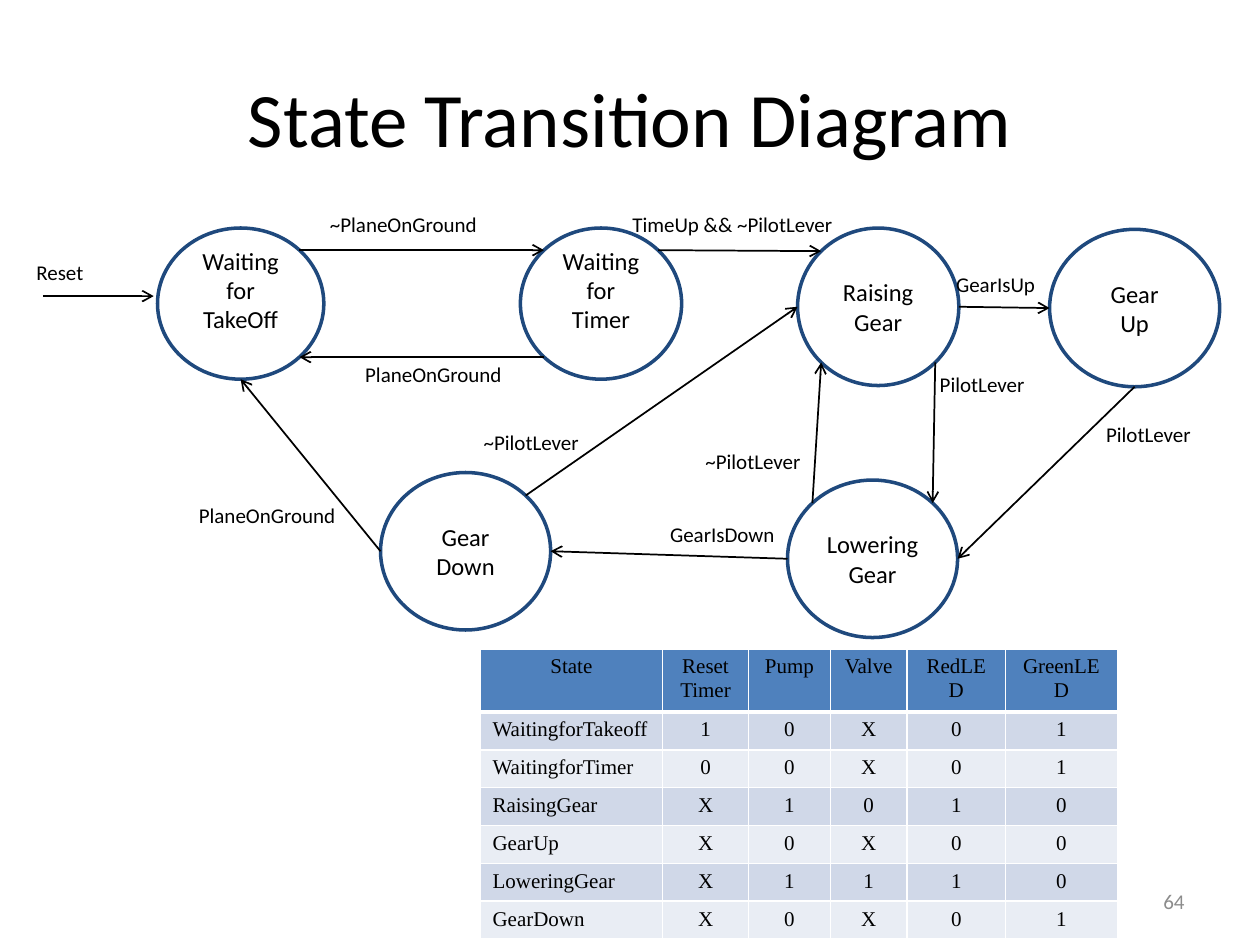
from math import cos, pi, sin
from typing import NamedTuple, Optional

from lxml.etree import SubElement
from pptx import Presentation
from pptx.dml.color import RGBColor
from pptx.enum.shapes import MSO_CONNECTOR, MSO_SHAPE
from pptx.enum.text import MSO_ANCHOR, MSO_AUTO_SIZE, PP_ALIGN
from pptx.oxml.ns import qn
from pptx.util import Pt

PX = 9144  # EMU in one px, at 100 px to the inch
BLACK, WHITE, NAVY, GRAY = "000000", "FFFFFF", "1F497D", "8C8C8C"
HEADER_FILL, BAND_FILLS = "4F81BD", ("D0D8E8", "E9EDF4")

# Connection sites of an ellipse, counterclockwise from the top
TOP, TOP_LEFT, LEFT, BOTTOM_LEFT, BOTTOM, BOTTOM_RIGHT, RIGHT, TOP_RIGHT = range(8)


class State(NamedTuple):
    text: str
    left: int
    top: int
    width: int
    height: int
    lift: int = 0  # extra space under the text


class Transition(NamedTuple):
    source: str
    source_site: int
    target: str
    target_site: int


class Label(NamedTuple):
    text: str
    left: int
    top: int
    width: int


STATES = {
    "takeoff": State("Waiting\vfor\vTakeOff", 125, 181, 132, 120, 22),
    "timer": State("Waiting\vfor\vTimer", 413, 181, 128, 120, 22),
    "up": State("Gear\vUp", 833, 182, 135, 125),
    "raising": State("Raising\vGear", 633, 181, 128, 125),
    "lowering": State("Lowering\vGear", 625, 381, 135, 125),
    "down": State("Gear\vDown", 302, 375, 135, 125),
}
TRANSITIONS = [
    Transition("takeoff", TOP_RIGHT, "timer", TOP_LEFT),
    Transition("timer", BOTTOM_LEFT, "takeoff", BOTTOM_RIGHT),
    Transition("timer", TOP_RIGHT, "raising", TOP_LEFT),
    Transition("raising", RIGHT, "up", LEFT),
    Transition("raising", BOTTOM_RIGHT, "lowering", TOP_RIGHT),
    Transition("lowering", TOP_LEFT, "raising", BOTTOM_LEFT),
    Transition("up", BOTTOM, "lowering", RIGHT),
    Transition("lowering", LEFT, "down", RIGHT),
    Transition("down", TOP_RIGHT, "raising", LEFT),
    Transition("down", LEFT, "takeoff", BOTTOM),
]
LABELS = [
    Label("Reset", 19, 201, 58),
    Label("~PlaneOnGround", 252, 163, 138),
    Label("PlaneOnGround", 280, 282, 130),
    Label("TimeUp && ~PilotLever", 492, 163, 181),
    Label("GearIsUp", 749, 211, 84),
    Label("PilotLever", 736, 290, 88),
    Label("~PilotLever", 550, 351, 97),
    Label("PilotLever", 868, 330, 88),
    Label("GearIsDown", 522, 409, 104),
    Label("~PilotLever", 374, 336, 97),
    Label("PlaneOnGround", 148, 394, 130),
]
COLUMN_WIDTHS = [145, 68, 65, 61, 78, 89]
HEADER_HEIGHT, ROW_HEIGHT = 50, 30
OUTPUTS = [
    ["State", "Reset\vTimer", "Pump", "Valve", "RedLED", "GreenLED"],
    ["WaitingforTakeoff", *"10X01"],
    ["WaitingforTimer", *"00X01"],
    ["RaisingGear", *"X1010"],
    ["GearUp", *"X0X00"],
    ["LoweringGear", *"X1110"],
    ["GearDown", *"X0X01"],
]


def rgb(color: str) -> RGBColor:
    return RGBColor.from_string(color)


def write(frame, text: str, size: int, color: str = BLACK,
          align: PP_ALIGN = PP_ALIGN.LEFT, font: str = "Calibri") -> None:
    frame.text = text
    for paragraph in frame.paragraphs:
        paragraph.alignment = align
        for run in paragraph.runs:
            run.font.size, run.font.name, run.font.bold = Pt(size), font, False
            run.font.color.rgb = rgb(color)


def add_text(slide, text: str, left: int, top: int, width: int, height: int, size: int,
             color: str = BLACK, align: PP_ALIGN = PP_ALIGN.LEFT):
    box = slide.shapes.add_textbox(left * PX, top * PX, width * PX, height * PX)
    write(box.text_frame, text, size, color, align)
    return box.text_frame


def add_state(slide, state: State):
    oval = slide.shapes.add_shape(MSO_SHAPE.OVAL, state.left * PX, state.top * PX,
                                  state.width * PX, state.height * PX)
    oval.shadow.inherit = False
    oval.fill.solid()
    oval.fill.fore_color.rgb = rgb(WHITE)
    oval.line.color.rgb = rgb(NAVY)
    oval.line.width = Pt(2)
    frame = oval.text_frame
    frame.word_wrap = True
    frame.vertical_anchor = MSO_ANCHOR.MIDDLE
    frame.margin_left = frame.margin_right = frame.margin_top = 0
    frame.margin_bottom = state.lift * PX
    write(frame, state.text, 14, align=PP_ALIGN.CENTER)
    return oval


def site_point(oval, site: int) -> tuple[int, int]:
    angle = pi / 2 + site * pi / 4
    return (round(oval.left + oval.width / 2 * (1 + cos(angle))),
            round(oval.top + oval.height / 2 * (1 - sin(angle))))


def add_arrow(slide, start: tuple[int, int], end: tuple[int, int]):
    arrow = slide.shapes.add_connector(MSO_CONNECTOR.STRAIGHT, *start, *end)
    arrow.line.color.rgb = rgb(BLACK)
    arrow.line.width = Pt(1)
    SubElement(arrow.line._get_or_add_ln(), qn("a:tailEnd"), type="arrow")
    SubElement(arrow._element.spPr, qn("a:effectLst"))
    return arrow


def add_transition(slide, ovals: dict, move: Transition) -> None:
    """Draw an arrow between two states and glue both of its ends."""
    source, target = ovals[move.source], ovals[move.target]
    arrow = add_arrow(slide, site_point(source, move.source_site),
                      site_point(target, move.target_site))
    glue = arrow._element.nvCxnSpPr.cNvCxnSpPr
    for tag, oval, site in (("a:stCxn", source, move.source_site),
                            ("a:endCxn", target, move.target_site)):
        SubElement(glue, qn(tag), id=str(oval.shape_id), idx=str(site))


def set_borders(cell, bottom: int) -> None:
    for side, points in (("L", 1), ("R", 1), ("T", 1), ("B", bottom)):
        border = SubElement(cell._tc.get_or_add_tcPr(), qn(f"a:ln{side}"), w=str(Pt(points)))
        SubElement(SubElement(border, qn("a:solidFill")), qn("a:srgbClr"), val=WHITE)


def add_output_table(slide, left: int, top: int) -> None:
    height = HEADER_HEIGHT + ROW_HEIGHT * (len(OUTPUTS) - 1)
    table = slide.shapes.add_table(len(OUTPUTS), len(COLUMN_WIDTHS), left * PX, top * PX,
                                   sum(COLUMN_WIDTHS) * PX, height * PX).table
    for column, width in zip(table.columns, COLUMN_WIDTHS):
        column.width = width * PX
    for r, values in enumerate(OUTPUTS):
        is_header = r == 0
        table.rows[r].height = (HEADER_HEIGHT if is_header else ROW_HEIGHT) * PX
        for c, value in enumerate(values):
            cell = table.cell(r, c)
            set_borders(cell, 3 if is_header else 1)
            cell.fill.solid()
            cell.fill.fore_color.rgb = rgb(HEADER_FILL if is_header else BAND_FILLS[(r - 1) % 2])
            align = PP_ALIGN.CENTER if is_header or c > 0 else PP_ALIGN.LEFT
            write(cell.text_frame, value, 12, align=align, font="Times New Roman")


def main() -> None:
    deck = Presentation()
    deck.slide_width, deck.slide_height = 1000 * PX, 750 * PX
    slide = deck.slides.add_slide(deck.slide_layouts[5])

    title = slide.shapes.title
    title.left, title.top, title.width, title.height = 50 * PX, 30 * PX, 900 * PX, 125 * PX
    title.text_frame.vertical_anchor = MSO_ANCHOR.MIDDLE
    write(title.text_frame, "State Transition Diagram", 44, align=PP_ALIGN.CENTER)

    ovals = {key: add_state(slide, state) for key, state in STATES.items()}
    add_arrow(slide, (34 * PX, 235 * PX), (122 * PX, 235 * PX))
    for move in TRANSITIONS:
        add_transition(slide, ovals, move)
    for label in LABELS:
        frame = add_text(slide, label.text, label.left, label.top, label.width, 30, 12)
        frame.word_wrap = False
        frame.auto_size = MSO_AUTO_SIZE.SHAPE_TO_FIT_TEXT
    add_output_table(slide, 381, 515)

    page_number = add_text(slide, "64", 717, 695, 233, 40, 12, GRAY, PP_ALIGN.RIGHT)
    page_number.word_wrap = True
    page_number.vertical_anchor = MSO_ANCHOR.MIDDLE
    deck.save("out.pptx")


if __name__ == "__main__":
    main()
